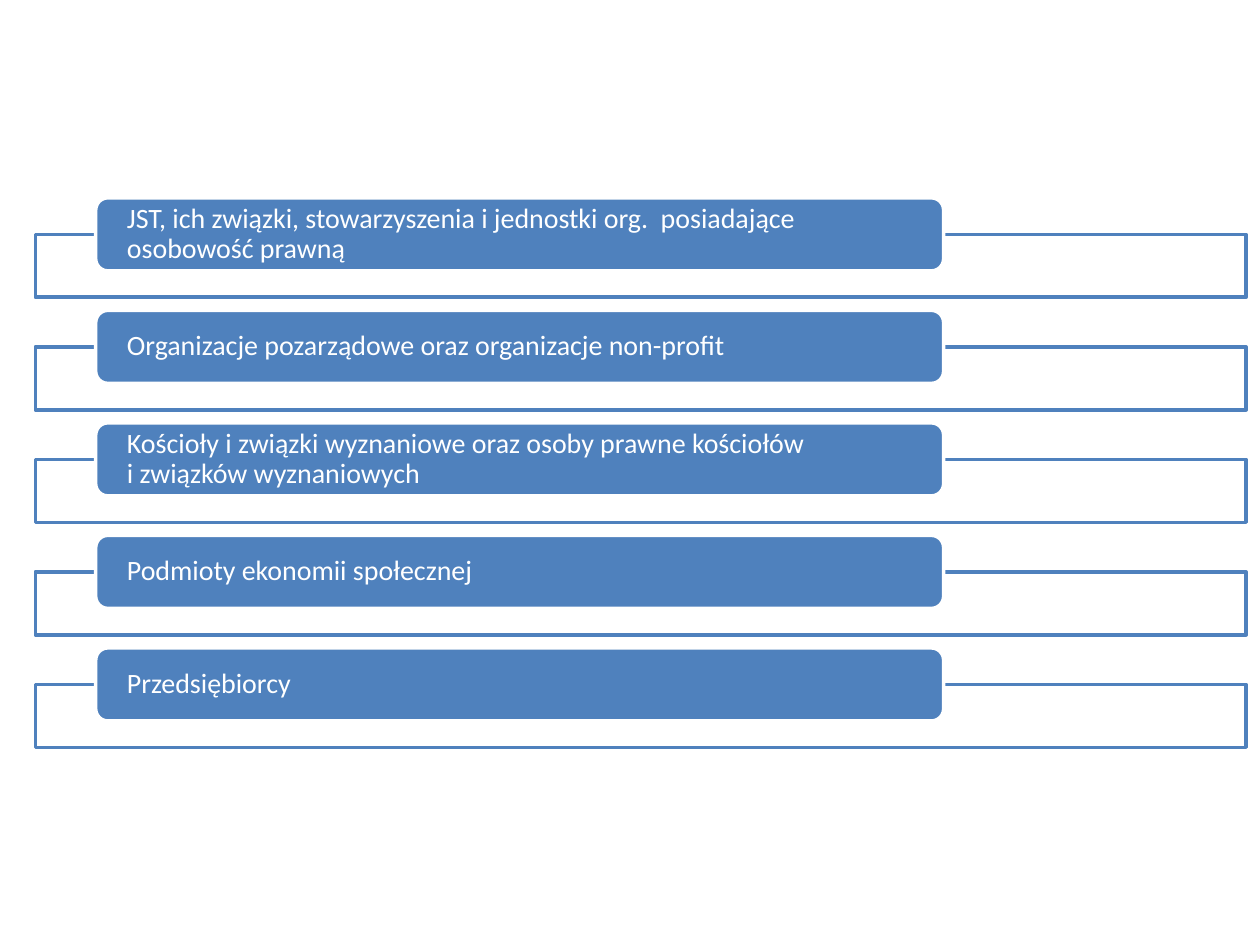
from dataclasses import dataclass

from lxml import etree
from pptx import Presentation
from pptx.dml.color import RGBColor
from pptx.enum.shapes import MSO_SHAPE
from pptx.enum.text import MSO_ANCHOR, PP_ALIGN
from pptx.oxml.ns import qn
from pptx.util import Inches, Pt

RECT = MSO_SHAPE.RECTANGLE
ROUND = MSO_SHAPE.ROUNDED_RECTANGLE
MIDDLE = MSO_ANCHOR.MIDDLE
LEFT = PP_ALIGN.LEFT


@dataclass(frozen=True)
class Theme:
    blue = RGBColor(0x4F, 0x81, 0xBD)
    white = RGBColor(0xFF, 0xFF, 0xFF)
    font = "Calibri"
    size = Pt(16)
    line = Pt(2)


theme = Theme()

GROUPS = [
    "JST, ich związki, stowarzyszenia i jednostki org.  posiadające osobowość prawną",
    "Organizacje pozarządowe oraz organizacje non-profit",
    "Kościoły i związki wyznaniowe oraz osoby prawne kościołów \vi związków wyznaniowych",
    "Podmioty ekonomii społecznej",
    "Przedsiębiorcy",
]
TOP = 1.57
STEP = 0.893
DROP = 0.29  # from the top of a label to the top of its frame

deck = Presentation()
deck.slide_width = Inches(10)
deck.slide_height = Inches(7.5)
slide = deck.slides.add_slide(deck.slide_layouts[6])


def add_box(kind, left, top, width, height, fill, line):
    box = slide.shapes.add_shape(
        kind, Inches(left), Inches(top), Inches(width), Inches(height))
    box.shadow.inherit = False
    box.fill.solid()
    box.fill.fore_color.rgb = fill
    box.line.color.rgb = line
    box.line.width = theme.line
    return box


for row, text in enumerate(GROUPS):
    top = TOP + row * STEP

    frame = add_box(RECT, 0.28, top + DROP, 9.61, 0.5, theme.white, theme.blue)
    color = frame.fill._xPr.find(qn("a:solidFill"))[0]
    etree.SubElement(color, qn("a:alpha"), val="90000")

    label = add_box(ROUND, 0.76, top, 6.73, 0.58, theme.blue, theme.white)
    body = label.text_frame
    body.word_wrap = True
    body.vertical_anchor = MIDDLE
    body.margin_left = body.margin_right = Inches(0.22)
    body.margin_top = body.margin_bottom = 0
    para = body.paragraphs[0]
    para.text = text
    para.alignment = LEFT
    para.line_spacing = 0.9
    para.font.name = theme.font
    para.font.size = theme.size
    para.font.color.rgb = theme.white

deck.save("out.pptx")
